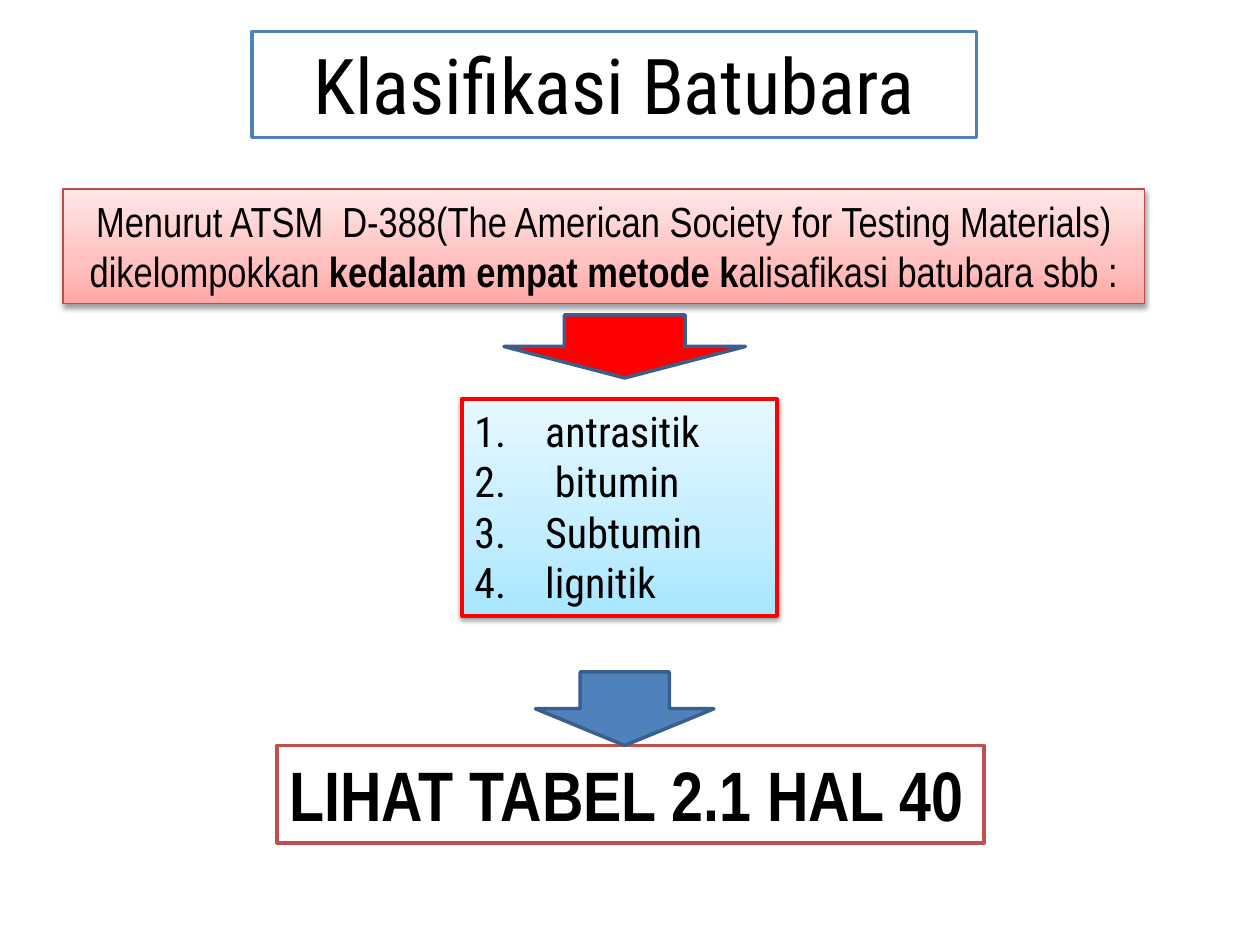
from dataclasses import dataclass

import pptx
import pptx.dml.color
import pptx.enum.shapes
import pptx.enum.text
import pptx.oxml
import pptx.oxml.ns
import pptx.util
from lxml import etree

Pt = pptx.util.Pt
qn = pptx.oxml.ns.qn
SHAPES = pptx.enum.shapes.MSO_SHAPE
ALIGN = pptx.enum.text.PP_ALIGN


@dataclass(frozen=True)
class Theme:
    heading_font: str = "Roboto Condensed"
    body_font: str = "Arial Narrow"
    title_size: float = 44
    callout_size: float = 40
    body_size: float = 24
    text: str = "000000"
    white: str = "FFFFFF"
    blue: str = "4F81BD"
    dark_blue: str = "3A5F8C"
    red: str = "FF0000"
    brick: str = "C0504D"
    dark_brick: str = "BF4C48"
    # Gradient stops from bottom to top, as (position in percent, colour)
    pink_gradient: tuple = ((0, "FFA6A5"), (35, "FFC0BF"), (100, "FFE7E7"))
    sky_gradient: tuple = ((0, "A7E6FF"), (35, "C1EDFF"), (100, "E7F8FF"))


THEME = Theme()


def rgb(colour):
    return pptx.dml.color.RGBColor.from_string(colour)


def add_box(slide, box, kind, line_colour, line_width, fill=None):
    shape = slide.shapes.add_shape(kind, *(Pt(value) for value in box))
    shape.shadow.inherit = False
    shape.line.color.rgb = rgb(line_colour)
    shape.line.width = Pt(line_width)
    if fill:
        shape.fill.solid()
        shape.fill.fore_color.rgb = rgb(fill)
    return shape


def add_gradient_and_shadow(shape, stops):
    shape.fill.gradient()
    shape.fill.gradient_angle = 90
    properties = shape._element.spPr
    stop_list = properties.find(".//" + qn("a:gsLst"))
    for stop in list(stop_list):
        stop_list.remove(stop)
    for position, colour in stops:
        stop = etree.SubElement(stop_list, qn("a:gs"), pos=str(position * 1000))
        etree.SubElement(stop, qn("a:srgbClr"), val=colour)

    shadow = etree.SubElement(
        properties.find(qn("a:effectLst")), qn("a:outerShdw"),
        blurRad=str(Pt(3.1)), dist=str(Pt(1.6)), dir="5400000", rotWithShape="0")
    colour = etree.SubElement(shadow, qn("a:srgbClr"), val="000000")
    etree.SubElement(colour, qn("a:alpha"), val="38000")


def write_text(shape, paragraphs, font, size, alignment=ALIGN.LEFT, wrap=True):
    """Each paragraph is a list of (text, bold) runs."""
    frame = shape.text_frame
    frame.word_wrap = wrap
    frame.auto_size = pptx.enum.text.MSO_AUTO_SIZE.SHAPE_TO_FIT_TEXT
    frame.vertical_anchor = pptx.enum.text.MSO_ANCHOR.TOP
    for index, runs in enumerate(paragraphs):
        paragraph = frame.add_paragraph() if index else frame.paragraphs[0]
        paragraph.alignment = alignment
        for text, bold in runs:
            run = paragraph.add_run()
            run.text = text
            run.font.name = font
            run.font.size = Pt(size)
            run.font.bold = bold
            run.font.color.rgb = rgb(THEME.text)


def add_title(slide, box):
    shape = add_box(slide, box, SHAPES.RECTANGLE, THEME.blue, 2, THEME.white)
    write_text(shape, [[("Klasifikasi Batubara", False)]],
               THEME.heading_font, THEME.title_size, ALIGN.CENTER)


def add_statement(slide, box):
    shape = add_box(slide, box, SHAPES.RECTANGLE, THEME.dark_brick, 0.75)
    add_gradient_and_shadow(shape, THEME.pink_gradient)
    runs = [
        ("Menurut ATSM  D-388(The American Society for Testing Materials) "
         "dikelompokkan ", False),
        ("kedalam empat metode k", True),
        ("alisafikasi batubara sbb :", False),
    ]
    write_text(shape, [runs], THEME.body_font, THEME.body_size, ALIGN.CENTER)


def add_class_list(slide, box):
    shape = add_box(slide, box, SHAPES.RECTANGLE, THEME.red, 2.25)
    add_gradient_and_shadow(shape, THEME.sky_gradient)
    classes = ["antrasitik", " bitumin", "Subtumin", "lignitik"]
    write_text(shape, [[(name, False)] for name in classes],
               THEME.heading_font, THEME.body_size)
    # Automatic numbering with a hanging indent
    indent = Pt(40.5)
    for paragraph in shape.text_frame.paragraphs:
        properties = paragraph._p.get_or_add_pPr()
        properties.set("marL", str(indent))
        properties.set("indent", str(-indent))
        etree.SubElement(properties, qn("a:buFont"), typeface="+mj-lt")
        etree.SubElement(properties, qn("a:buAutoNum"), type="arabicPeriod")


def add_down_arrow(slide, box, fill):
    add_box(slide, box, SHAPES.DOWN_ARROW, THEME.dark_blue, 2, fill)


def add_callout(slide, box):
    shape = add_box(slide, box, SHAPES.RECTANGLE, THEME.brick, 2, THEME.white)
    write_text(shape, [[("LIHAT TABEL 2.1 HAL 40", True)]],
               THEME.body_font, THEME.callout_size, wrap=False)


def main():
    presentation = pptx.Presentation()
    presentation.slide_width = Pt(720)
    presentation.slide_height = Pt(540)
    slide = presentation.slides.add_slide(presentation.slide_layouts[6])

    # Boxes are left, top, width, height
    add_title(slide, (144, 18, 414, 60.5))
    add_statement(slide, (36, 108, 618, 65.5))
    add_class_list(slide, (264, 228, 180, 123.8))
    add_down_arrow(slide, (288, 180, 138, 36), THEME.red)
    add_callout(slide, (158.4, 426, 404, 55.7))
    add_down_arrow(slide, (306, 384, 102, 42), THEME.blue)

    presentation.save("out.pptx")


if __name__ == "__main__":
    main()
